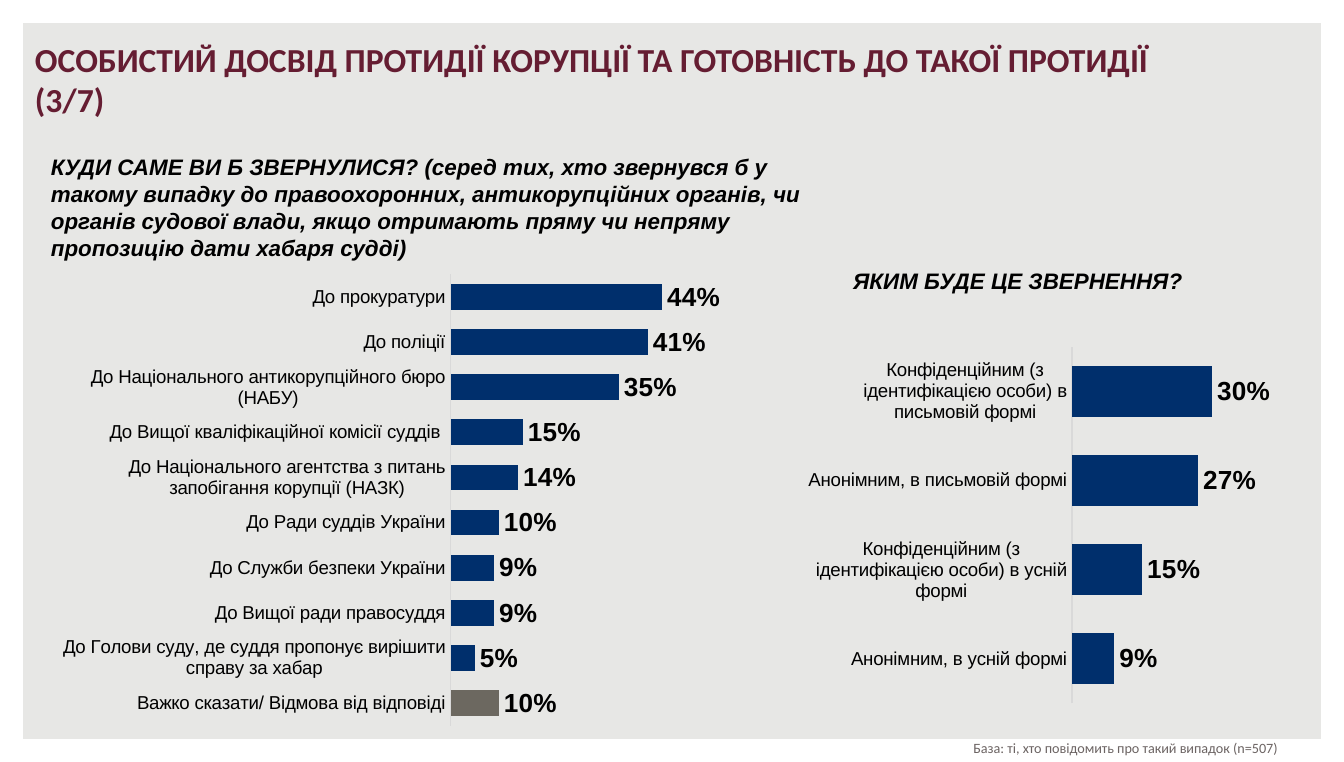
"""Build the survey slide on where people would report a bribe offer."""
from dataclasses import dataclass

from lxml import etree
from pptx import Presentation
from pptx.chart.data import CategoryChartData
from pptx.dml.color import RGBColor
from pptx.enum.chart import XL_CHART_TYPE, XL_LABEL_POSITION, XL_TICK_MARK
from pptx.enum.shapes import MSO_SHAPE
from pptx.enum.text import MSO_ANCHOR, MSO_AUTO_SIZE, PP_ALIGN
from pptx.oxml.ns import qn
from pptx.util import Pt

BAR = XL_CHART_TYPE.BAR_CLUSTERED
OUTSIDE_END = XL_LABEL_POSITION.OUTSIDE_END
NO_TICK = XL_TICK_MARK.NONE
FRAME = MSO_SHAPE.FRAME
TOP, MIDDLE = MSO_ANCHOR.TOP, MSO_ANCHOR.MIDDLE
LEFT, CENTER = PP_ALIGN.LEFT, PP_ALIGN.CENTER
NO_AUTOFIT = MSO_AUTO_SIZE.NONE

TITLE = "ОСОБИСТИЙ ДОСВІД ПРОТИДІЇ КОРУПЦІЇ ТА ГОТОВНІСТЬ ДО ТАКОЇ ПРОТИДІЇ (3/7)"
WHERE_QUESTION = (
    "КУДИ САМЕ ВИ Б ЗВЕРНУЛИСЯ? (серед тих, хто звернувся б у такому випадку до "
    "правоохоронних, антикорупцiйних органiв, чи органiв судової влади, якщо "
    "отримають пряму чи непряму пропозицію дати хабаря судді)"
)
HOW_QUESTION = "ЯКИМ БУДЕ ЦЕ ЗВЕРНЕННЯ?"
SAMPLE_NOTE = "База: ті, хто повідомить про такий випадок (n=507)"
WHERE_ANSWERS = {
    "До прокуратури": 0.44,
    "До поліції": 0.41,
    "До Національного антикорупційного бюро (НАБУ)": 0.35,
    "До Вищої кваліфікаційної комісії суддів ": 0.15,
    "До Національного агентства з питань запобігання корупції (НАЗК)": 0.14,
    "До Ради суддів України": 0.10,
    "До Служби безпеки України": 0.09,
    "До Вищої ради правосуддя": 0.09,
    "До Голови суду, де суддя пропонує вирішити справу за хабар": 0.05,
    "Важко сказати/ Відмова від відповіді": 0.10,
}
HOW_ANSWERS = {
    "Конфіденційним (з ідентифікацією особи) в письмовій формі": 0.30,
    "Анонімним, в письмовій формі": 0.27,
    "Конфіденційним (з ідентифікацією особи) в усній формі": 0.15,
    "Анонімним, в усній формі": 0.09,
}


@dataclass(frozen=True)
class Theme:
    """Colours, fonts and type sizes of the slide."""

    background: str = "E7E7E5"
    frame: str = "FFFFFF"
    title: str = "651D32"
    text: str = "000000"
    note: str = "6C6463"
    bar: str = "002F6C"
    undecided_bar: str = "6C6860"
    axis: str = "D9D9D9"
    heading_font: str = "Calibri"
    body_font: str = "Arial"
    title_size: float = 18
    question_size: float = 12
    category_size: float = 10
    value_size: float = 14
    note_size: float = 7.6


class SlideBuilder:
    """Adds styled elements to one slide."""

    def __init__(self, slide, theme):
        self.slide = slide
        self.theme = theme

    def paint(self, fill, color):
        fill.solid()
        fill.fore_color.rgb = RGBColor.from_string(color)

    def style_font(self, font, name, size, color, bold=False, italic=False):
        font.name, font.size = name, Pt(size)
        font.bold, font.italic = bold, italic
        font.color.rgb = RGBColor.from_string(color)

    def background(self):
        self.paint(self.slide.background.fill, self.theme.background)

    def frame(self, width, height):
        shape = self.slide.shapes.add_shape(FRAME, 0, 0, Pt(width), Pt(height))
        shape.adjustments[0] = 0.03
        shape.shadow.inherit = False
        self.paint(shape.fill, self.theme.frame)
        shape.line.fill.background()

    def title(self, text, left, top, width, height):
        shape = self.slide.shapes.title
        shape.left, shape.top = Pt(left), Pt(top)
        shape.width, shape.height = Pt(width), Pt(height)
        frame = shape.text_frame
        frame.text = text
        frame.auto_size, frame.vertical_anchor = NO_AUTOFIT, TOP
        paragraph = frame.paragraphs[0]
        paragraph.alignment = LEFT
        theme = self.theme
        self.style_font(paragraph.font, theme.heading_font, theme.title_size, theme.title, bold=True)

    def text_box(self, text, left, top, width, height):
        shape = self.slide.shapes.add_textbox(Pt(left), Pt(top), Pt(width), Pt(height))
        frame = shape.text_frame
        frame.word_wrap = True
        frame.text = text
        return frame

    def question(self, text, *box):
        paragraph = self.text_box(text, *box).paragraphs[0]
        paragraph.space_after = Pt(8)
        theme = self.theme
        self.style_font(paragraph.font, theme.body_font, theme.question_size, theme.text, True, True)

    def note(self, text, *box):
        frame = self.text_box(text, *box)
        frame.vertical_anchor = MIDDLE
        paragraph = frame.paragraphs[0]
        paragraph.alignment = CENTER
        theme = self.theme
        self.style_font(paragraph.font, theme.heading_font, theme.note_size, theme.note)

    def place_plot(self, chart, bounds):
        area = chart.element.find(".//" + qn("c:plotArea"))
        for layout in area.findall(qn("c:layout")):
            area.remove(layout)
        layout = etree.Element(qn("c:layout"))
        manual = etree.SubElement(layout, qn("c:manualLayout"))
        settings = [("layoutTarget", "inner"), ("xMode", "edge"), ("yMode", "edge")]
        settings += zip("xywh", bounds)
        for tag, value in settings:
            etree.SubElement(manual, qn(f"c:{tag}")).set("val", str(value))
        area.insert(0, layout)

    def bar_chart(self, answers, maximum, plot_bounds, left, top, width, height):
        theme = self.theme
        data = CategoryChartData(number_format="0%")
        data.categories = list(answers)
        data.add_series("Series 1", list(answers.values()))
        chart = self.slide.shapes.add_chart(
            BAR, Pt(left), Pt(top), Pt(width), Pt(height), data
        ).chart
        chart.has_legend = chart.has_title = False
        self.style_font(chart.font, theme.heading_font, theme.category_size, theme.text)

        categories = chart.category_axis
        categories.reverse_order = True
        categories.has_major_gridlines = False
        categories.major_tick_mark = categories.minor_tick_mark = NO_TICK
        categories.format.line.width = Pt(0.75)
        categories.format.line.color.rgb = RGBColor.from_string(theme.axis)
        self.style_font(categories.tick_labels.font, theme.body_font, theme.category_size, theme.text)

        values = chart.value_axis
        values.minimum_scale, values.maximum_scale = 0, maximum
        values.has_major_gridlines = values.visible = False

        plot = chart.plots[0]
        plot.gap_width, plot.vary_by_categories = 75, False
        series = plot.series[0]
        self.paint(series.format.fill, theme.bar)
        labels = series.data_labels
        labels.show_value, labels.position = True, OUTSIDE_END
        labels.number_format, labels.number_format_is_linked = "0%", False
        self.style_font(labels.font, theme.body_font, theme.value_size, theme.text, bold=True)
        self.place_plot(chart, plot_bounds)
        return series

    def highlight(self, series, index, color):
        self.paint(series.points[index].format.fill, color)


def main():
    width, height = 720, 408.24
    presentation = Presentation()
    presentation.slide_width, presentation.slide_height = Pt(width), Pt(height)
    slide = presentation.slides.add_slide(presentation.slide_layouts[5])
    theme = Theme()
    builder = SlideBuilder(slide, theme)
    builder.background()
    builder.frame(width, height)
    builder.title(TITLE, 11.5, 17.3, 612, 36.7)
    builder.question(WHERE_QUESTION, 20.2, 78.5, 436.3, 87.8)
    where = builder.bar_chart(
        WHERE_ANSWERS, 0.7, (0.502, 0.012, 0.409, 0.957), 20.2, 144, 440.6, 252.7
    )
    builder.highlight(where, len(WHERE_ANSWERS) - 1, theme.undecided_bar)
    builder.bar_chart(
        HOW_ANSWERS, 0.5, (0.537, 0.008, 0.463, 0.983), 429.8, 184.3, 269.3, 194.4
    )
    builder.question(HOW_QUESTION, 450, 139.7, 260, 21.6)
    builder.note(SAMPLE_NOTE, 496.8, 392.4, 212.4, 16.6)
    presentation.save("out.pptx")


if __name__ == "__main__":
    main()
